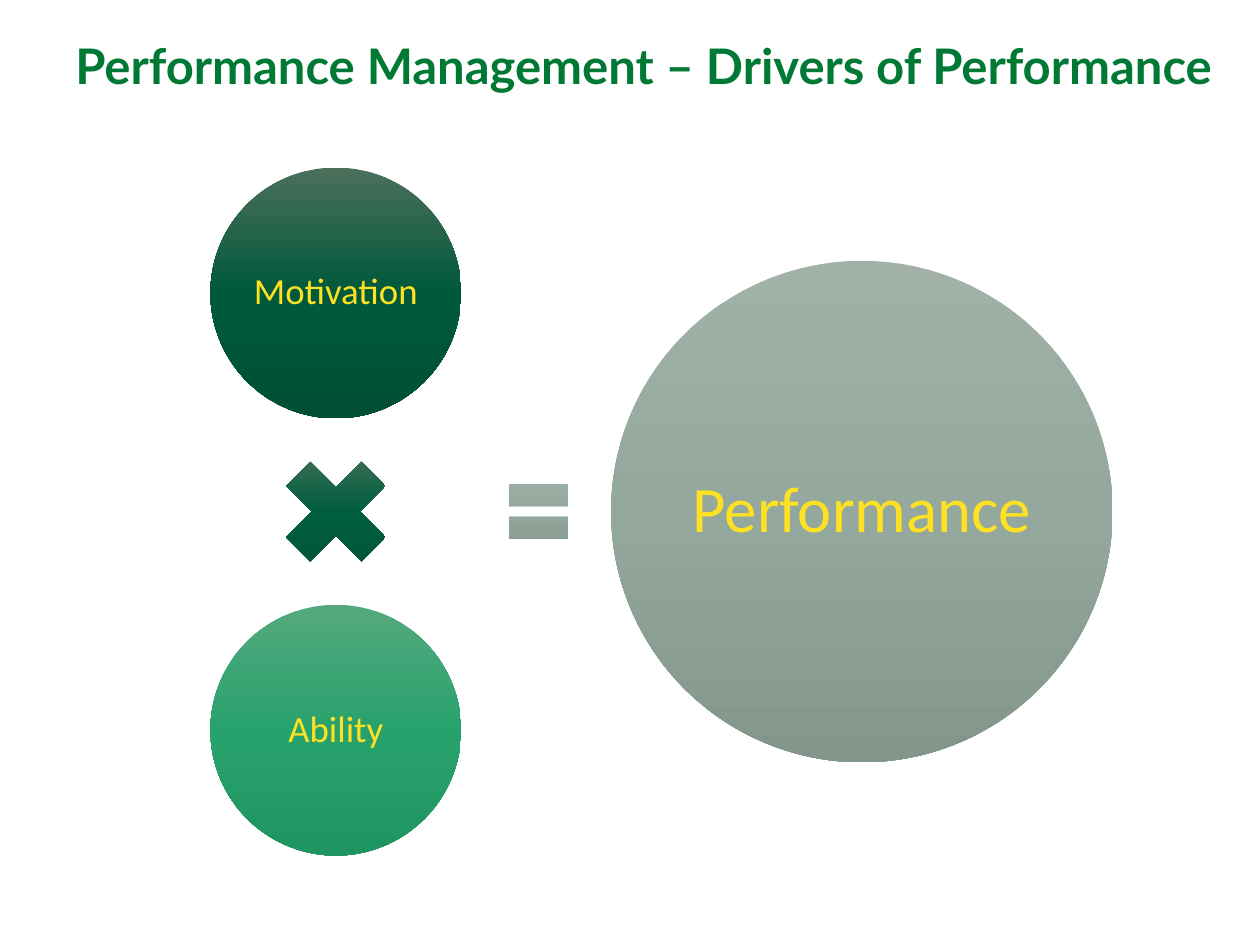
from copy import deepcopy
from dataclasses import dataclass

from pptx import Presentation
from pptx.dml.color import RGBColor
from pptx.enum.shapes import MSO_SHAPE as Shape
from pptx.enum.text import MSO_ANCHOR as Anchor, PP_ALIGN as Align
from pptx.oxml.ns import qn
from pptx.util import Inches, Pt


@dataclass(frozen=True)
class Theme:
    title_font: str = "Lato"
    body_font: str = "Calibri"
    title_size: int = 28
    driver_size: int = 21
    result_size: int = 37
    title: str = "007935"
    label: str = "FEE123"
    motivation: tuple = ("4B6F5B", "00593B", "004F34")
    multiply: tuple = ("4B725D", "005E3E", "005337")
    ability: tuple = ("54A97E", "28A26D", "1F9561")
    result: tuple = ("A1B1A8", "94A89D", "83968C")


theme = Theme()


def fill_gradient(shape, colors):
    shape.fill.gradient()
    shape.fill.gradient_angle = 270
    stop_list = shape.element.spPr.find(qn("a:gradFill")).find(qn("a:gsLst"))
    stop_list.insert(1, deepcopy(stop_list[0]))
    for index, (stop, color) in enumerate(zip(shape.fill.gradient_stops, colors)):
        stop.position = index / 2
        stop.color.rgb = RGBColor.from_string(color)


def write_text(frame, text, font_name, size, color, bold=False):
    run = frame.paragraphs[0].add_run()
    run.text = text
    font_format = {"name": font_name, "size": Pt(size), "bold": bold}
    for name, value in font_format.items():
        setattr(run.font, name, value)
    run.font.color.rgb = RGBColor.from_string(color)


presentation = Presentation()
presentation.slide_width = Inches(10)
presentation.slide_height = Inches(7.5)
slide = presentation.slides.add_slide(presentation.slide_layouts[6])

title_box = slide.shapes.add_textbox(Inches(0.5), Inches(0.23), Inches(9.5), Inches(0.57))
title_box.text_frame.word_wrap = True
write_text(title_box.text_frame, "Performance Management – Drivers of Performance",
           theme.title_font, theme.title_size, theme.title, bold=True)

middle = 4.06
driver_center = 2.665
driver_offset = 1.735

equation = [
    (Shape.OVAL, driver_center, middle - driver_offset, 1.99, 1.99,
     theme.motivation, "Motivation", theme.driver_size, 0.03),
    (Shape.MATH_MULTIPLY, driver_center, middle, 1.15, 1.15,
     theme.multiply, "", 0, 0),
    (Shape.OVAL, driver_center, middle + driver_offset, 1.99, 1.99,
     theme.ability, "Ability", theme.driver_size, 0.03),
    (Shape.MATH_EQUAL, 4.275, middle, 0.63, 0.74,
     theme.result, "", 0, 0),
    (Shape.OVAL, 6.84, middle, 3.98, 3.98,
     theme.result, "Performance", theme.result_size, 0.05),
]

for kind, center_x, center_y, width, height, colors, label, size, inset in equation:
    shape = slide.shapes.add_shape(
        kind, Inches(center_x - width / 2), Inches(center_y - height / 2),
        Inches(width), Inches(height))
    shape.shadow.inherit = False
    shape.line.fill.background()
    fill_gradient(shape, colors)
    if label:
        frame = shape.text_frame
        frame_format = {"word_wrap": True, "vertical_anchor": Anchor.MIDDLE}
        for side in ("left", "top", "right", "bottom"):
            frame_format[f"margin_{side}"] = Inches(inset)
        for name, value in frame_format.items():
            setattr(frame, name, value)
        paragraph = frame.paragraphs[0]
        paragraph.alignment = Align.CENTER
        paragraph.line_spacing = 0.9
        write_text(frame, label, theme.body_font, size, theme.label)

presentation.save("out.pptx")
